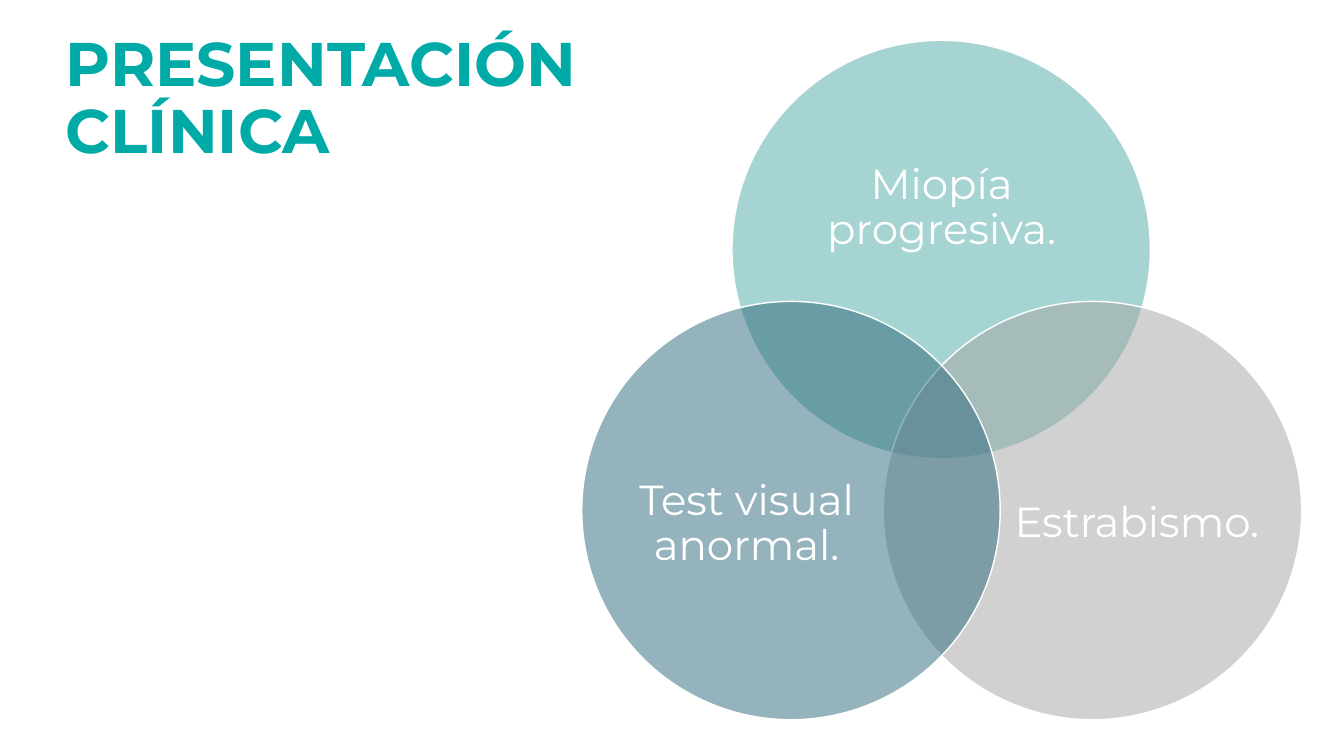
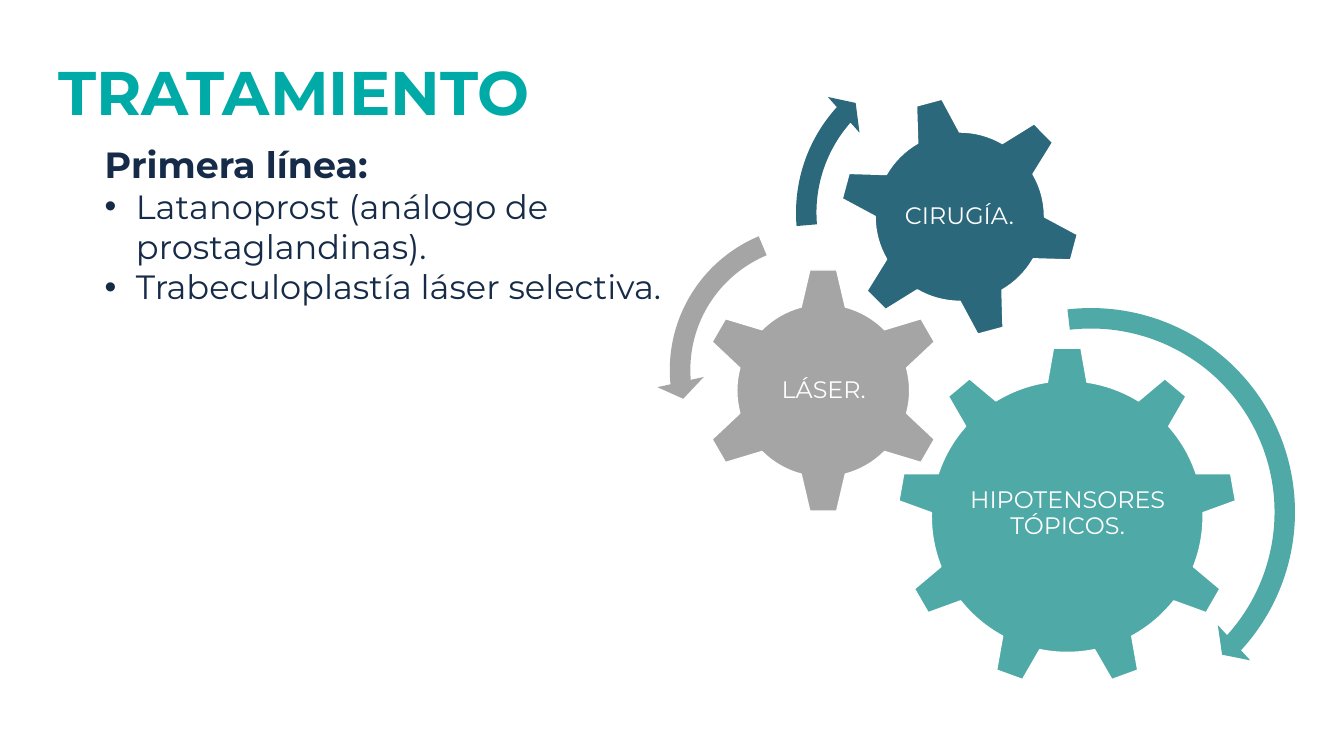
"""Build two slides on the clinical presentation and treatment of an eye disease."""
from lxml import etree
from pptx import Presentation
from pptx.dml.color import RGBColor
from pptx.enum.shapes import MSO_SHAPE
from pptx.enum.text import MSO_ANCHOR, MSO_AUTO_SIZE, PP_ALIGN
from pptx.oxml.ns import qn
from pptx.util import Inches, Pt

TITLE_TEAL = RGBColor(0x00, 0xAA, 0xA7)
TEAL = RGBColor(0x4F, 0xAA, 0xA7)
GRAY = RGBColor(0xA5, 0xA5, 0xA5)
BLUE = RGBColor(0x2C, 0x68, 0x7C)
NAVY = RGBColor(0x15, 0x2B, 0x48)
WHITE = RGBColor(0xFF, 0xFF, 0xFF)

OVAL = MSO_SHAPE.OVAL
GEAR_6 = MSO_SHAPE.GEAR_6
GEAR_9 = MSO_SHAPE.GEAR_9
CLOCKWISE = MSO_SHAPE.CIRCULAR_ARROW
COUNTERCLOCKWISE = MSO_SHAPE.LEFT_CIRCULAR_ARROW
LEFT, CENTER = PP_ALIGN.LEFT, PP_ALIGN.CENTER
MIDDLE = MSO_ANCHOR.MIDDLE
NO_FIT = MSO_AUTO_SIZE.NONE

FONT = "Montserrat"
TITLE_ONLY = 5
TITLE_SIZE = (11.5, 1.45)
CIRCLE = 4.15
HANGING = 0.31
DEGREE = 0.6
PERCENT = 0.01

VENN = [
    ("Miopía progresiva.", (7.26, 0.4), TEAL, (7.82, 1.13, 3.04, 1.87)),
    ("Estrabismo.", (8.76, 2.99), GRAY, (10.03, 4.06, 2.49, 2.28)),
    ("Test visual anormal.", (5.77, 2.99), BLUE, (6.16, 4.06, 2.49, 2.28)),
]
GEARS = [
    ("HIPOTENSORES TÓPICOS.", GEAR_9, (8.9, 3.44, 3.37), 0, TEAL, (9.58, 4.23, 2.02, 1.73)),
    ("LÁSER.", GEAR_6, (6.94, 2.65, 2.45), 0, GRAY, (7.56, 3.27, 1.22, 1.21)),
    ("CIRUGÍA.", GEAR_6, (8.32, 0.95, 2.4), 345, BLUE, (8.84, 1.48, 1.35, 1.35)),
]
ARROWS = [
    (CLOCKWISE, (8.66, 2.92, 4.32), TEAL, 4.7, (5, 42.4, 263.4), 5.5),
    (COUNTERCLOCKWISE, (6.51, 2.1, 3.14), GRAY, 6.5, (7.2, 174.8, 247.3), 7.5),
    (CLOCKWISE, (7.76, 0.42, 3.38), BLUE, 6, (6.6, 221.9, 175.1), 7),
]
FIRST_LINE = [
    "Latanoprost (análogo de prostaglandinas).",
    "Trabeculoplastía láser selectiva.",
]


def style_font(font, size, color, bold=False):
    """Apply the deck font with a size, colour and weight."""
    for attribute, value in {"name": FONT, "size": Pt(size), "bold": bold}.items():
        setattr(font, attribute, value)
    font.color.rgb = color


def add_titled_slide(deck, title, left, top):
    """Add a slide with its title placed and formatted."""
    slide = deck.slides.add_slide(deck.slide_layouts[TITLE_ONLY])
    heading = slide.shapes.title
    bounds = zip(("left", "top", "width", "height"), (left, top, *TITLE_SIZE))
    for side, length in bounds:
        setattr(heading, side, Inches(length))
    frame = heading.text_frame
    frame.text = title
    frame.word_wrap = True
    frame.auto_size = NO_FIT
    frame.vertical_anchor = MIDDLE
    paragraph = frame.paragraphs[0]
    paragraph.alignment = LEFT
    paragraph.line_spacing = 0.9
    for run in paragraph.runs:
        style_font(run.font, TITLE_SIZE_PT, TITLE_TEAL, True)
    return slide


TITLE_SIZE_PT = 44


def add_figure(slide, kind, square, color, outlined=True):
    """Add a filled shape in a square given by left, top and side."""
    left, top, side = map(Inches, square)
    figure = slide.shapes.add_shape(kind, left, top, side, side)
    figure.shadow.inherit = False
    figure.fill.solid()
    figure.fill.fore_color.rgb = color
    if outlined:
        figure.line.color.rgb = WHITE
        figure.line.width = Pt(1)
    else:
        figure.line.fill.background()
    return figure


def make_translucent(figure, opacity):
    """Set the opacity of a solid fill in percent."""
    color = figure.fill._xPr.find(qn("a:solidFill"))[0]
    etree.SubElement(color, qn("a:alpha"), val=str(opacity * 1000))


def add_label(slide, text, bounds, size, inset):
    """Add white centred text over a figure."""
    frame = slide.shapes.add_textbox(*map(Inches, bounds)).text_frame
    frame.word_wrap = True
    frame.vertical_anchor = MIDDLE
    for side in ("left", "top", "right", "bottom"):
        setattr(frame, f"margin_{side}", Inches(inset))
    paragraph = frame.paragraphs[0]
    paragraph.text = text
    paragraph.alignment = CENTER
    paragraph.line_spacing = 0.9
    style_font(paragraph.runs[0].font, size, WHITE)


def add_turn_arrow(slide, kind, square, color, thickness, angles, head):
    """Add a curved arrow from percentages and angles in degrees."""
    arrow = add_figure(slide, kind, square, color, outlined=False)
    values = [thickness * PERCENT, *(angle * DEGREE for angle in angles), head * PERCENT]
    for index, value in enumerate(values):
        arrow.adjustments[index] = value


def add_bulleted_list(slide, heading, items, bounds):
    """Add a bold heading followed by bulleted items."""
    frame = slide.shapes.add_textbox(*map(Inches, bounds)).text_frame
    frame.word_wrap = True
    frame.text = heading
    style_font(frame.paragraphs[0].runs[0].font, 26, NAVY, True)
    for item in items:
        paragraph = frame.add_paragraph()
        properties = paragraph._p.get_or_add_pPr()
        properties.set("marL", str(Inches(HANGING)))
        properties.set("indent", str(-Inches(HANGING)))
        etree.SubElement(properties, qn("a:buFont"), typeface="Arial")
        etree.SubElement(properties, qn("a:buChar"), char="•")
        paragraph.text = item
        style_font(paragraph.runs[0].font, 24, NAVY)


def build_presentation_slide(deck):
    """Build the Venn diagram of clinical signs."""
    slide = add_titled_slide(deck, "PRESENTACIÓN\vCLÍNICA", 0.55, 0.27)
    for sign, corner, color, label_bounds in VENN:
        circle = add_figure(slide, OVAL, (*corner, CIRCLE), color)
        make_translucent(circle, 50)
        add_label(slide, sign, label_bounds, 30, 0)


def build_treatment_slide(deck):
    """Build the treatment gears and the first-line list."""
    slide = add_titled_slide(deck, "TRATAMIENTO", 0.48, 0.22)
    for treatment, kind, square, rotation, color, label_bounds in GEARS:
        gear = add_figure(slide, kind, square, color)
        gear.rotation = rotation
        add_label(slide, treatment, label_bounds, 17, 0.02)
    for arrow in ARROWS:
        add_turn_arrow(slide, *arrow)
    add_bulleted_list(slide, "Primera línea:", FIRST_LINE, (0.94, 1.36, 5.89, 1.75))


def main():
    """Build and save the deck."""
    deck = Presentation()
    deck.slide_width, deck.slide_height = Inches(13.33), Inches(7.5)
    build_presentation_slide(deck)
    build_treatment_slide(deck)
    deck.save("out.pptx")


if __name__ == "__main__":
    main()
